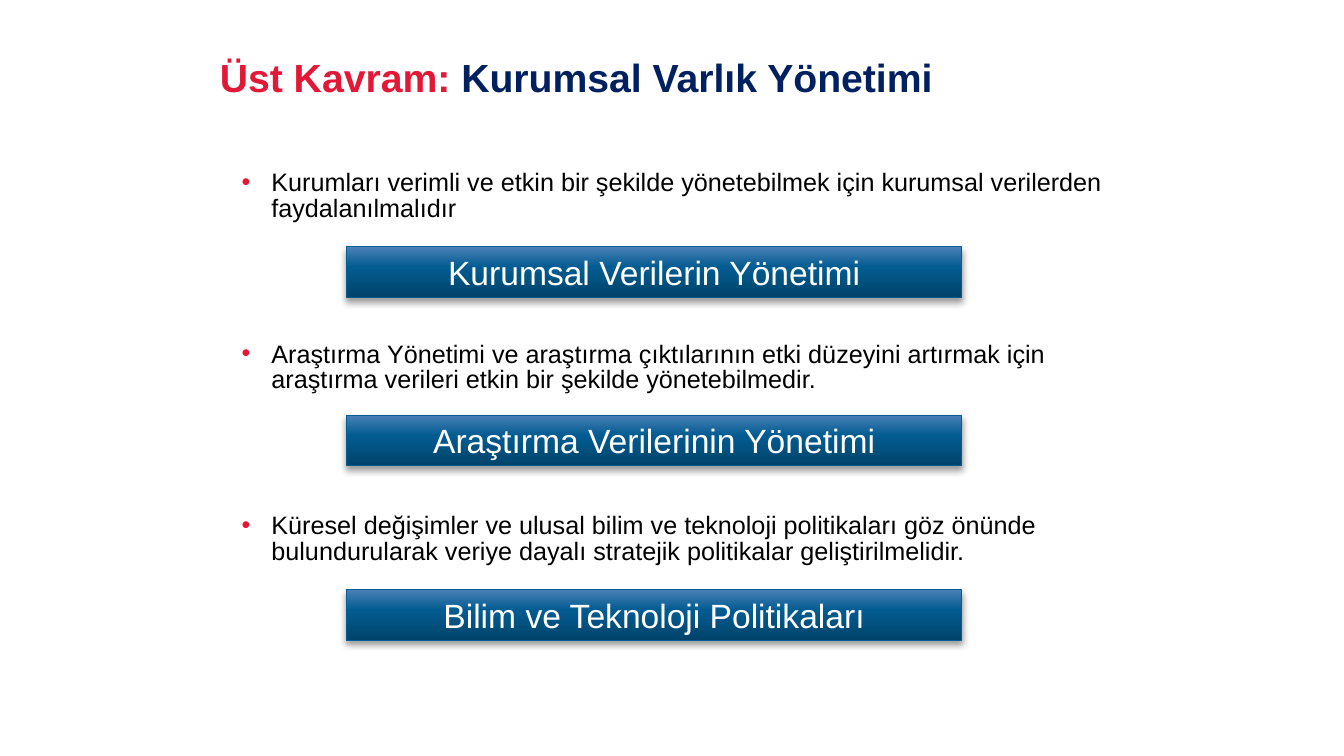
from copy import deepcopy
from lxml.etree import SubElement
from pptx import Presentation
from pptx.dml.color import RGBColor
from pptx.enum.shapes import MSO_SHAPE
from pptx.enum.text import MSO_ANCHOR, PP_ALIGN
from pptx.oxml.ns import qn
from pptx.util import Cm, Pt

RED = RGBColor(0xE3, 0x18, 0x37)
NAVY = RGBColor(0x00, 0x20, 0x60)
BLACK = RGBColor(0, 0, 0)
WHITE = RGBColor(255, 255, 255)
EDGE = RGBColor(0x03, 0x5E, 0x94)
STOPS = [
    (0, RGBColor(0x00, 0x43, 0x6A)),
    (0.6, RGBColor(0x03, 0x5C, 0x91)),
    (1, RGBColor(0x4A, 0x80, 0xB7)),
]

TITLE = [("Üst Kavram: ", RED), ("Kurumsal Varlık Yönetimi", NAVY)]
ITEMS = [
    ("Kurumları verimli ve etkin bir şekilde yönetebilmek için kurumsal verilerden faydalanılmalıdır",
     4.19, 22.5, "Kurumsal Verilerin Yönetimi", 6.22),
    ("Araştırma Yönetimi ve araştırma çıktılarının etki düzeyini artırmak için "
     "araştırma verileri etkin bir şekilde yönetebilmedir.",
     8.51, 22.5, "Araştırma Verilerinin Yönetimi", 10.46),
    ("Küresel değişimler ve ulusal bilim ve teknoloji politikaları göz önünde "
     "bulundurularak veriye dayalı stratejik politikalar geliştirilmelidir.",
     12.83, 21.87, "Bilim ve Teknoloji Politikaları", 14.86),
]


def write(shape, runs, size, bold=False, align=PP_ALIGN.LEFT,
          anchor=MSO_ANCHOR.TOP, bullet=None):
    frame = shape.text_frame
    frame.word_wrap = True
    frame.vertical_anchor = anchor
    para = frame.paragraphs[0]
    para.alignment = align
    if bullet:
        props = para._p.get_or_add_pPr()
        props.set("marL", str(Cm(0.75)))
        props.set("indent", str(-Cm(0.75)))
        tint = SubElement(props, qn("a:buClr"))
        SubElement(tint, qn("a:srgbClr"), val=str(RED))
        SubElement(props, qn("a:buFont"), typeface="Arial")
        SubElement(props, qn("a:buChar"), char=bullet)
        para.line_spacing = 0.85
    for text, color in runs:
        run = para.add_run()
        run.text = text
        run.font.name = "Arial"
        run.font.size = Pt(size)
        run.font.bold = bold
        run.font.color.rgb = color
    return frame


def paint(shape):
    fill = shape.fill
    fill.gradient()
    fill.gradient_angle = 90
    props = shape._element.spPr
    group = props.find(qn("a:gradFill")).find(qn("a:gsLst"))
    group.append(deepcopy(group[-1]))
    for stop, (place, color) in zip(fill.gradient_stops, STOPS):
        stop.position = place
        stop.color.rgb = color
    shape.line.color.rgb = EDGE
    shape.line.width = Pt(0.75)
    shape.shadow.inherit = False
    shade = SubElement(props.find(qn("a:effectLst")), qn("a:outerShdw"),
                       blurRad=str(Pt(5.2)), dist=str(Pt(3)),
                       dir="5400000", rotWithShape="0")
    tone = SubElement(shade, qn("a:srgbClr"), val="000000")
    SubElement(tone, qn("a:alpha"), val="40000")


deck = Presentation()
deck.slide_width, deck.slide_height = Cm(33.87), Cm(19.05)
slide = deck.slides.add_slide(deck.slide_layouts[6])
shapes = slide.shapes

head = shapes.add_textbox(Cm(5.54), Cm(0.97), Cm(22.66), Cm(1.57))
frame = write(head, TITLE, 28, bold=True, align=PP_ALIGN.JUSTIFY,
              anchor=MSO_ANCHOR.BOTTOM)
frame.margin_left = frame.margin_right = frame.margin_bottom = 0

for note, top, width, label, low in ITEMS:
    box = shapes.add_textbox(Cm(5.84), Cm(top), Cm(width), Cm(1.73))
    write(box, [(note, BLACK)], 18, bullet="•")
    bar = shapes.add_shape(MSO_SHAPE.RECTANGLE, Cm(8.74), Cm(low), Cm(15.49), Cm(1.27))
    paint(bar)
    write(bar, [(label, WHITE)], 24, align=PP_ALIGN.CENTER, anchor=MSO_ANCHOR.MIDDLE)

deck.save("out.pptx")
